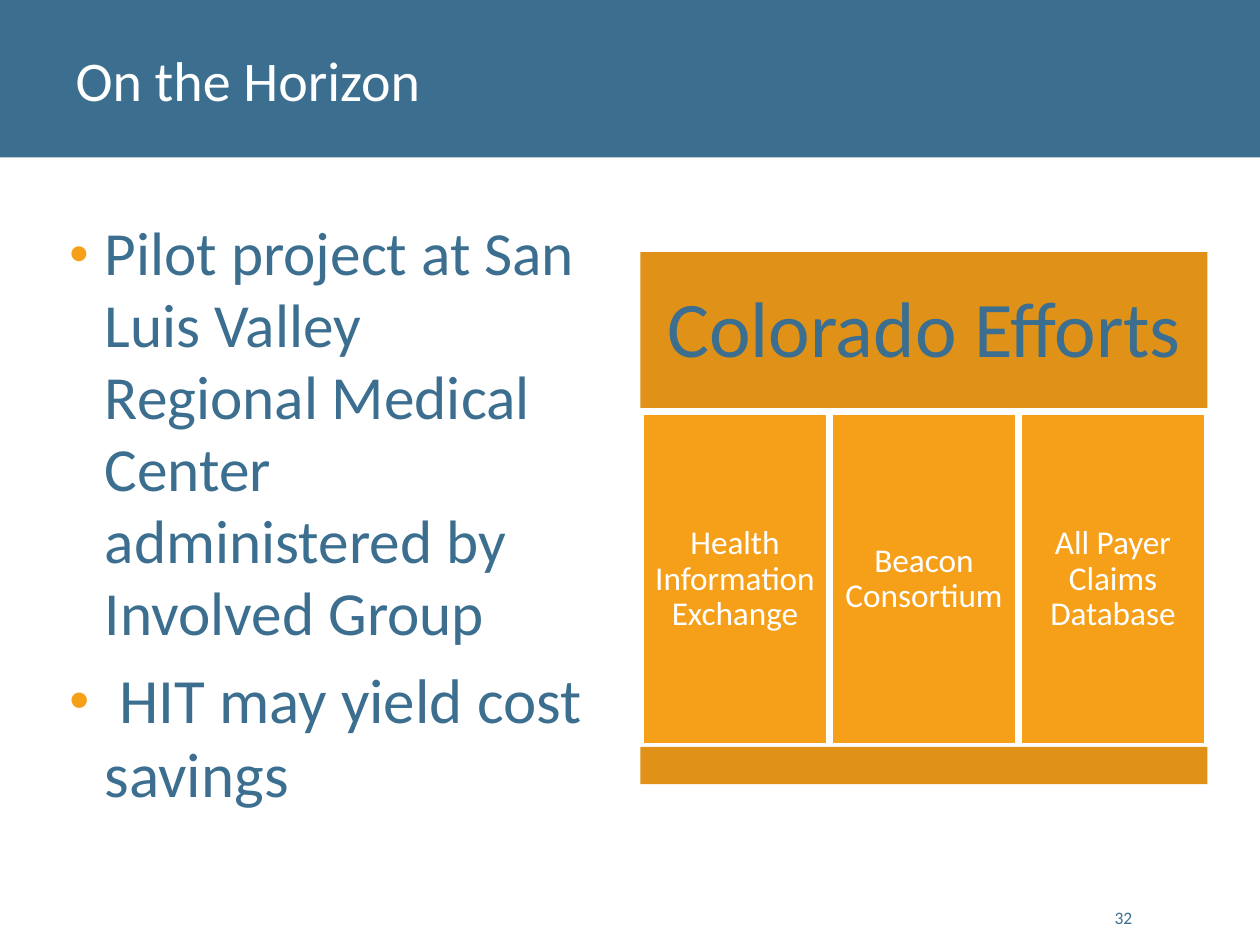
import pptx
import pptx.util
import pptx.dml.color
import pptx.enum.shapes
import pptx.enum.text
import pptx.oxml
import pptx.oxml.ns

Pt = pptx.util.Pt
Align = pptx.enum.text.PP_ALIGN
Mid = pptx.enum.text.MSO_ANCHOR.MIDDLE
BLUE, GOLD, DARK, WHITE = "3B6E8F", "F6A01A", "DF9118", "FFFFFF"


def paint(part, color):
    part.fill.solid()
    part.fill.fore_color.rgb = pptx.dml.color.RGBColor.from_string(color)


def block(left, top, width, height, color, text="", size=18, ink=WHITE):
    rect = pptx.enum.shapes.MSO_SHAPE.RECTANGLE
    shape = slide.shapes.add_shape(rect, Pt(left), Pt(top), Pt(width), Pt(height))
    shape.shadow.inherit = False
    shape.line.fill.background()
    paint(shape, color)
    if text:
        frame = shape.text_frame
        frame.margin_left = frame.margin_right = Pt(5.75)
        frame.vertical_anchor = Mid
        frame.text = text
        para = frame.paragraphs[0]
        para.alignment = Align.CENTER
        para.line_spacing = 0.9
        font = para.runs[0].font
        font.name, font.size = "Calibri", Pt(size)
        paint(font, ink)
    return shape


deck = pptx.Presentation()
deck.slide_width, deck.slide_height = Pt(720), Pt(540)
slide = deck.slides.add_slide(deck.slide_layouts[5])

band = block(0, 0, 720, 90, BLUE)
slide.shapes._spTree.insert(2, band._element)

title = slide.shapes.title
title.left, title.top, title.width, title.height = Pt(36), Pt(0), Pt(648), Pt(90)
title.text_frame.text = "On the Horizon"
title.text_frame.vertical_anchor = Mid
para = title.text_frame.paragraphs[0]
para.alignment = Align.LEFT
font = para.runs[0].font
font.name, font.size = "Calibri", Pt(32)
paint(font, WHITE)

body = slide.shapes.add_textbox(Pt(24), Pt(121), Pt(348), Pt(419))
frame = body.text_frame
frame.word_wrap = True
points = [
    ("Pilot project at San Luis Valley \vRegional Medical Center \vadministered by Involved Group", 35),
    (" HIT may yield cost savings", 36),
]
frame.text = "\n".join(text for text, size in points)
for index, (para, (text, size)) in enumerate(zip(frame.paragraphs, points)):
    props = para._p.get_or_add_pPr()
    props.set("marL", str(Pt(28.8)))
    props.set("indent", str(Pt(-20.2)))
    space = pptx.oxml.ns.nsdecls("a")
    for xml in (
        f'<a:buClr {space}><a:srgbClr val="{GOLD}"/></a:buClr>',
        f'<a:buSzPct {space} val="90000"/>',
        f'<a:buFont {space} typeface="Arial"/>',
        f'<a:buChar {space} char="•"/>',
    ):
        props.append(pptx.oxml.parse_xml(xml))
    para.line_spacing = 0.98
    para.space_before = Pt(4 * index)
    para.space_after = Pt(4)
    for run in para.runs:
        run.font.name, run.font.size = "Calibri", Pt(size)
        paint(run.font, BLUE)

number = slide.shapes.add_textbox(Pt(625), Pt(505), Pt(29), Pt(29))
frame = number.text_frame
frame.word_wrap = True
frame.vertical_anchor = pptx.enum.text.MSO_ANCHOR.BOTTOM
frame.text = "32"
para = frame.paragraphs[0]
para.alignment = Align.RIGHT
font = para.runs[0].font
font.name, font.size = "Calibri", Pt(10)
paint(font, BLUE)

left, wide = 366, 324
block(left, 144, wide, 91.2, DARK, "Colorado Efforts", 45, BLUE)
efforts = ["Health Information Exchange", "Beacon Consortium", "All Payer Claims Database"]
step = wide / len(efforts)
for index, effort in enumerate(efforts):
    card = block(left + index * step, 235.2, step, 191.6, GOLD, effort, 19)
    paint(card.line, WHITE)
    card.line.width = Pt(4.33)
block(left, 426.8, wide, 21.3, DARK)

deck.save("out.pptx")
